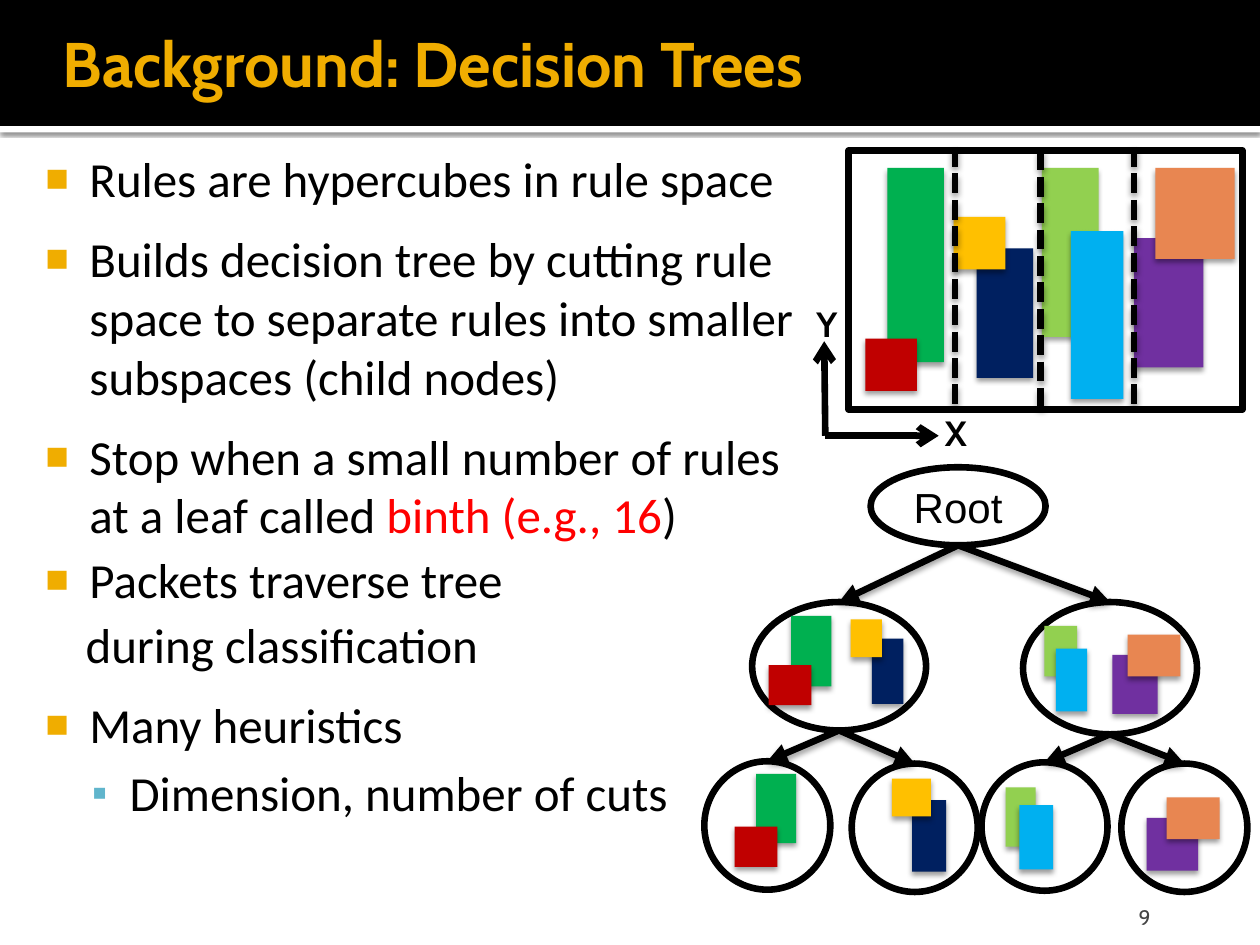
from pptx import Presentation
from pptx.dml.color import RGBColor
from pptx.enum.dml import MSO_LINE
from pptx.enum.shapes import MSO_CONNECTOR, MSO_SHAPE
from pptx.enum.text import MSO_ANCHOR, PP_ALIGN
from pptx.oxml.ns import qn
from pptx.util import Pt
from lxml.etree import SubElement

BLACK = RGBColor(0x00, 0x00, 0x00)
WHITE = RGBColor(0xFF, 0xFF, 0xFF)
GOLD = RGBColor(0xF0, 0xAD, 0x00)
TEAL = RGBColor(0x60, 0xB5, 0xCC)
GRAY = RGBColor(0x45, 0x45, 0x45)
BRIGHT_RED = RGBColor(0xFF, 0x00, 0x00)
GREEN = RGBColor(0x00, 0xB0, 0x50)
RED = RGBColor(0xC0, 0x00, 0x00)
NAVY = RGBColor(0x00, 0x20, 0x60)
YELLOW = RGBColor(0xFF, 0xC0, 0x00)
LIME = RGBColor(0x92, 0xD0, 0x50)
CYAN = RGBColor(0x00, 0xB0, 0xF0)
PURPLE = RGBColor(0x70, 0x30, 0xA0)
ORANGE = RGBColor(0xE8, 0x86, 0x51)
STROKE = 3.78


def add_shadow(sp, blur=3.1, dist=2, alpha=38):
    """Give a shape a black shadow below it; alpha 0 gives none."""
    sp_pr = sp._element.spPr
    for old in sp_pr.findall(qn("a:effectLst")):
        sp_pr.remove(old)
    effects = SubElement(sp_pr, qn("a:effectLst"))
    if alpha:
        outer = SubElement(effects, qn("a:outerShdw"), blurRad=str(Pt(blur)),
                           dist=str(Pt(dist)), dir="5400000", rotWithShape="0")
        color = SubElement(outer, qn("a:srgbClr"), val=str(BLACK))
        SubElement(color, qn("a:alpha"), val=str(alpha * 1000))


def add_box(s, kind, x, y, w, h, fill=None, outline=False):
    sp = s.shapes.add_shape(kind, Pt(x), Pt(y), Pt(w), Pt(h))
    sp.shadow.inherit = False
    if fill is None:
        sp.fill.background()
    else:
        sp.fill.solid()
        sp.fill.fore_color.rgb = fill
    if outline:
        sp.line.color.rgb = BLACK
        sp.line.width = Pt(STROKE)
    else:
        sp.line.fill.background()
    return sp


def add_rules(s, x, y, rules):
    """Draw shadowed rule rectangles relative to (x, y)."""
    for color, dx, dy, w, h in rules:
        add_shadow(add_box(s, MSO_SHAPE.RECTANGLE, x + dx, y + dy, w, h, color))


def add_line(s, start, end, tip=None, dashed=False, shadow=True):
    line = s.shapes.add_connector(MSO_CONNECTOR.STRAIGHT, *map(Pt, start + end))
    line.line.color.rgb = BLACK
    line.line.width = Pt(STROKE)
    if dashed:
        line.line.dash_style = MSO_LINE.SQUARE_DOT
    if tip:
        SubElement(line.line._get_or_add_ln(), qn("a:tailEnd"), type=tip)
    add_shadow(line, 3.5, 2, 38 if shadow else 0)


def add_run(p, text, size, font, color, bold=False):
    r = p.add_run()
    r.text = text
    r.font.size = Pt(size)
    r.font.name = font
    r.font.bold = bold
    r.font.color.rgb = color


def add_text_box(s, x, y, w, h, insets=(7.2, 3.6, 7.2, 3.6), anchor=MSO_ANCHOR.TOP):
    tf = s.shapes.add_textbox(Pt(x), Pt(y), Pt(w), Pt(h)).text_frame
    tf.word_wrap = True
    tf.vertical_anchor = anchor
    tf.margin_left, tf.margin_top, tf.margin_right, tf.margin_bottom = map(Pt, insets)
    return tf


def set_bullet(p, char, color, percent, left, indent):
    p_pr = p._p.get_or_add_pPr()
    p_pr.set("marL", str(Pt(left)))
    p_pr.set("indent", str(Pt(indent)))
    if not char:
        SubElement(p_pr, qn("a:buNone"))
        return
    SubElement(SubElement(p_pr, qn("a:buClr")), qn("a:srgbClr"), val=str(color))
    SubElement(p_pr, qn("a:buSzPct"), val=str(percent * 1000))
    SubElement(p_pr, qn("a:buFont"), typeface="Arial")
    SubElement(p_pr, qn("a:buChar"), char=char)


def draw_header(s, x, y, w, h):
    strip = add_box(s, MSO_SHAPE.RECTANGLE, x, y + h, w, 3.6, WHITE)
    add_shadow(strip, 2.5, 0.8, 60)
    add_box(s, MSO_SHAPE.RECTANGLE, x, y, w, h, BLACK)
    tf = add_text_box(s, x + 28.8, y + 5.8, 667.4, 59.8,
                      (7.2, 3.6, 3.6, 3.6), MSO_ANCHOR.MIDDLE)
    add_run(tf.paragraphs[0], "Background: Decision Trees", 36, "Cabin", GOLD, True)


def draw_body(s, x, y, w, h):
    main = ("■", GOLD, 80, 34.6, -25.2)
    plain = (None, None, 0, 34.6, -2.2)
    sub = ("▪", TEAL, 90, 57.6, -21.6)
    # bullet, space before, line spacing, runs
    items = [
        (main, 12, 1, [("Rules are hypercubes in rule space", BLACK)]),
        (main, 12, 1, [("Builds decision tree by cutting rule space to separate "
                        "rules into smaller subspaces (child nodes)", BLACK)]),
        (main, 12, 1, [("Stop when a small number of rules at a leaf called ", BLACK),
                       ("binth (e.g., 16", BRIGHT_RED), (")", BLACK)]),
        (main, 0, 1.1, [("Packets traverse tree", BLACK)]),
        (plain, 0, 1.1, [("during classification", BLACK)]),
        (main, 12, 1, [("Many heuristics", BLACK)]),
        (sub, 5.6, 1, [("Dimension, number of cuts", BLACK)]),
    ]
    tf = add_text_box(s, x, y, w, h, (4.3, 7.2, 7.2, 3.6))
    for i, (bullet, before, spacing, runs) in enumerate(items):
        p = tf.add_paragraph() if i else tf.paragraphs[0]
        p.level = int(bullet is sub)
        p.space_before = Pt(before)
        p.line_spacing = spacing
        set_bullet(p, *bullet)
        for text, color in runs:
            add_run(p, text, 28, "Calibri", color)


def draw_rule_space(s, x, y, w, h):
    add_box(s, MSO_SHAPE.RECTANGLE, x, y, w, h, WHITE, outline=True)
    add_rules(s, x, y, [
        (GREEN, 22, 10, 32.4, 111), (RED, 9.5, 107.5, 29.5, 30),
        (NAVY, 73, 56, 32.4, 74), (YELLOW, 60, 38, 29.5, 30),
        (LIME, 110.4, 10, 32.4, 96.5), (CYAN, 127, 46, 30, 96),
        (PURPLE, 163, 50, 39.6, 74), (ORANGE, 175.2, 10, 45.4, 52)])
    # Cuts
    for dx, dy in [(60.8, -2), (109.7, 0), (163, -2)]:
        add_line(s, (x + dx, y + dy), (x + dx, y + dy + h), dashed=True)
    # Axes
    origin = (x - 13.4, y + 163)
    for label, tip, dx, dy in [("X", (51.4, 163), 47.8, 145.8),
                               ("Y", (-14, 109), -25.6, 83.2)]:
        add_line(s, origin, (x + tip[0], y + tip[1]), "arrow", shadow=False)
        tf = add_text_box(s, x + dx, y + dy, 15.1, 32.4)
        add_run(tf.paragraphs[0], label, 20, "Cabin", BLACK, True)


def draw_tree(s, x, y):
    # name: left, top, width, height, rules inside
    nodes = {
        "root": (95.5, 0, 100, 44.6, []),
        "left": (27.8, 77, 99.4, 73.4, [
            (GREEN, 22.3, 7.9, 23, 40.3), (RED, 9.4, 36, 24.5, 23),
            (NAVY, 68.4, 20.9, 18, 37.4), (YELLOW, 56.2, 10, 18, 21.6)]),
        "right": (182.6, 77, 99.4, 75.6, [
            (LIME, 12.2, 13.7, 18.7, 28.8), (CYAN, 18.7, 26.6, 18, 36),
            (PURPLE, 51.1, 30.2, 25.9, 33.8), (ORANGE, 59.8, 18.7, 30.2, 23.8)]),
        "leaf 1": (0.5, 168, 72, 73.4, [
            (GREEN, 29.5, 7.2, 23, 39.6), (RED, 17.3, 37.4, 24.5, 23)]),
        "leaf 2": (84.7, 169.3, 72, 73.4, [
            (NAVY, 34.6, 20.9, 19.4, 41), (YELLOW, 23, 8.6, 22.3, 21.6)]),
        "leaf 3": (158.9, 168.6, 72, 73.4, [
            (LIME, 13.7, 14.4, 17.3, 33.8), (CYAN, 21.6, 24.5, 19.4, 36.7)]),
        "leaf 4": (238.8, 169.3, 72, 73.4, [
            (PURPLE, 14.4, 31, 29.5, 30.2), (ORANGE, 25.9, 19.4, 30.2, 23.8)]),
    }
    children = {"root": ("left", "right"), "left": ("leaf 1", "leaf 2"),
                "right": ("leaf 3", "leaf 4")}
    for name, (dx, dy, w, h, rules) in nodes.items():
        sp = add_box(s, MSO_SHAPE.OVAL, x + dx, y + dy, w, h, outline=True)
        add_rules(s, x + dx, y + dy, rules)
        if name == "root":
            sp.text_frame.vertical_anchor = MSO_ANCHOR.MIDDLE
            p = sp.text_frame.paragraphs[0]
            p.alignment = PP_ALIGN.CENTER
            add_run(p, "Root", 24, "Arial", BLACK)
        # Edges run from the bottom of the parent to the top of each child
        for child in children.get(name, ()):
            cx, cy, cw = nodes[child][:3]
            add_line(s, (x + dx + w / 2, y + dy + h), (x + cx + cw / 2, y + cy), "triangle")


def draw_page_number(s, x, y, w, h):
    tf = add_text_box(s, x, y, w, h, (7.2, 3.6, 7.2, 0), MSO_ANCHOR.BOTTOM)
    p = tf.paragraphs[0]
    p.alignment = PP_ALIGN.RIGHT
    add_run(p, "9", 12, "Cabin", GRAY)


def main():
    prs = Presentation()
    prs.slide_width, prs.slide_height = Pt(720), Pt(540)
    s = prs.slides.add_slide(prs.slide_layouts[6])
    draw_header(s, 0, 0, 720, 72)
    draw_body(s, 12.2, 77.8, 462.2, 432)
    draw_page_number(s, 607, 509.8, 57.6, 21.6)
    draw_rule_space(s, 485, 86, 225, 148)
    draw_tree(s, 402, 267)
    prs.save("out.pptx")


if __name__ == "__main__":
    main()
